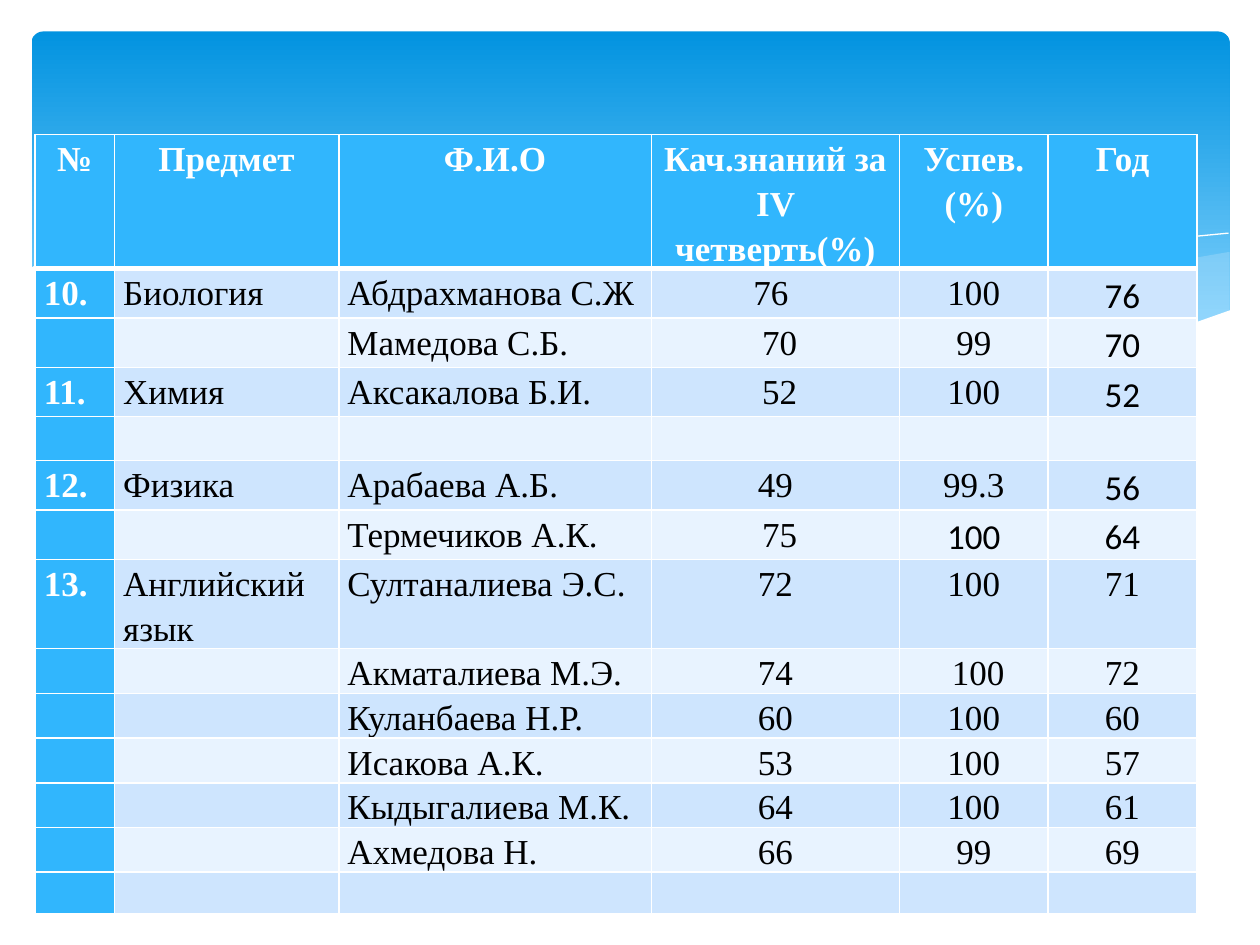
"""Build a slide with a table of school results over a blue wave banner."""
from lxml import etree
from pptx import Presentation
from pptx.dml.color import RGBColor
from pptx.enum import shapes, text
from pptx.oxml import ns
from pptx.util import Pt

WHITE = RGBColor(0xFF, 0xFF, 0xFF)
BLACK = RGBColor(0, 0, 0)
BANNER_TOP = RGBColor(0x02, 0x93, 0xE0)
BANNER_BOTTOM = RGBColor(0x83, 0xD3, 0xFE)
WAVE = RGBColor(0xC6, 0xE7, 0xFC)
ACCENT = RGBColor(0x31, 0xB6, 0xFD)
BANDS = (RGBColor(0xE8, 0xF3, 0xFF), RGBColor(0xCE, 0xE5, 0xFE))

HEADER = ("№", "Предмет", "Ф.И.О", "Кач.знаний за IV четверть(%)", "Успев. (%)", "Год")
RESULTS = [
    ("10.", "Биология", "Абдрахманова С.Ж", "76 ", "100", "76"),
    ("", "", "Мамедова С.Б.", " 70", "99", "70"),
    ("11.", "Химия", "Аксакалова Б.И.", " 52", "100", "52"),
    ("", "", "", "", "", ""),
    ("12.", "Физика", "Арабаева А.Б.", "49", "99.3", "56"),
    ("", "", "Термечиков А.К.", " 75", "100", "64"),
    ("13.", "Английский язык", "Султаналиева Э.С.", "72", "100", "71"),
    ("", "", "Акматалиева М.Э.", "74", " 100", "72"),
    ("", "", "Куланбаева Н.Р.", "60", "100", "60"),
    ("", "", "Исакова А.К.", "53", "100", "57"),
    ("", "", "Кыдыгалиева М.К.", "64", "100", "61"),
    ("", "", "Ахмедова Н.", "66", "99", "69"),
    ("", "", "", "", "", ""),
]
CALIBRI_CELLS = {(1, 5), (2, 5), (3, 5), (5, 5), (6, 4), (6, 5)}
COLUMN_WIDTHS = (45.4, 128.2, 178.6, 141.8, 85, 85)
ROW_HEIGHTS = (76, 28.2, 28.2, 28.2, 25.2, 28.2, 28.2, 51) + (25.5,) * 5 + (24,)

RIGHT_WAVE = [
    (702, 144), (673.2, 149), (619.9, 160.6), (560.9, 174.2), (508.3, 185),
    (475.9, 190.8), (507.6, 195.1), (545, 198.7), (578.2, 200.2), (614.9, 198.7),
    (645.8, 194.4), (673.2, 188.6), (702.7, 177.8), (702.7, 144),
]
LEFT_WAVE = [
    (643, 196.6), (581, 187.2), (508.3, 172.8), (452.9, 159.8), (399.6, 147.6),
    (352.1, 139.7), (302.4, 134.6), (259.9, 133.2), (205.9, 137.5), (260.6, 146.2),
    (323.3, 159.8), (381.6, 172.8), (445, 185.8), (500.4, 194.4), (547.9, 199.4),
    (589, 200.2), (617, 199.4),
]
FALLING_LINE = [
    (222.5, 140.4), (247.7, 136.8), (288.7, 134.6), (337.7, 136.1), (383.8, 139.7),
    (437.8, 146.9), (500.4, 157.7), (572.4, 173.5), (653, 195.8),
]
RISING_LINE = [
    (441.4, 185), (500.4, 169.2), (558.7, 155.5), (623.5, 143.3), (665.3, 136.8),
    (702, 133.2),
]
WHITE_WAVE = [
    (703.4, 177.1), (676.8, 186.5), (647.3, 193.7), (612, 198), (582.5, 199.4),
    (535.7, 197.3), (481, 190.8), (416.9, 180), (321.8, 158.4), (262.8, 145.4),
    (210.2, 136.8), (165.6, 133.2), (127.4, 132.5), (85.7, 134.6), (54.7, 140.4),
    (28.8, 147.6), (16.6, 153.4), (16.6, 236.9), (703.4, 236.9),
]
CURVES = [
    (RIGHT_WAVE, WAVE, 29),
    (LEFT_WAVE, WAVE, 40),
    (FALLING_LINE, None, 100),
    (RISING_LINE, None, 100),
    (WHITE_WAVE, WHITE, 100),
]


def add_banner(page):
    banner = page.shapes.add_shape(
        shapes.MSO_SHAPE.ROUNDED_RECTANGLE, Pt(18), Pt(18), Pt(684.7), Pt(194.4))
    banner.adjustments[0] = 0.034
    banner.shadow.inherit = False
    banner.line.fill.background()
    banner.fill.gradient()
    banner.fill.gradient_angle = 270
    stops = banner.fill.gradient_stops
    for stop, position, color in zip(stops, (0, 0.9), (BANNER_TOP, BANNER_BOTTOM)):
        stop.position = position
        stop.color.rgb = color


def add_curve(page, points, color, opacity):
    corners = [(Pt(x), Pt(y)) for x, y in points]
    builder = page.shapes.build_freeform(*corners[0])
    builder.add_line_segments(corners[1:], close=color is not None)
    curve = builder.convert_to_shape()
    curve.shadow.inherit = False
    if color is None:
        curve.fill.background()
        curve.line.color.rgb = WHITE
        curve.line.width = Pt(0)
        return
    curve.line.fill.background()
    curve.fill.solid()
    curve.fill.fore_color.rgb = color
    if opacity < 100:
        tint = curve.fill._xPr.find(".//" + ns.qn("a:srgbClr"))
        etree.SubElement(tint, ns.qn("a:alpha"), val=str(opacity * 1000))


def set_borders(cell, row):
    properties = cell._tc.get_or_add_tcPr()
    widths = {"L": 1, "R": 1, "T": 3 if row == 1 else 1, "B": 3 if row == 0 else 1}
    for side, width in widths.items():
        edge = etree.SubElement(properties, ns.qn("a:ln" + side), w=str(Pt(width)))
        paint = etree.SubElement(edge, ns.qn("a:solidFill"))
        etree.SubElement(paint, ns.qn("a:srgbClr"), val=str(WHITE))


def fill_cell(cell, row, column, words):
    strong = row == 0 or column == 0
    set_borders(cell, row)
    cell.fill.solid()
    cell.fill.fore_color.rgb = ACCENT if strong else BANDS[row % 2]
    cell.margin_left = cell.margin_right = Pt(4.3 if row == 0 else 5)
    cell.margin_top = cell.margin_bottom = Pt(0)
    if not words:
        return
    para = cell.text_frame.paragraphs[0]
    para.text = words
    para.line_spacing = 1.15
    centred = row == 0 or column >= 3
    para.alignment = text.PP_ALIGN.CENTER if centred else text.PP_ALIGN.LEFT
    font = para.runs[0].font
    font.name = "Calibri" if (row, column) in CALIBRI_CELLS else "Times New Roman"
    font.size = Pt(20)
    font.bold = strong
    font.color.rgb = WHITE if strong else BLACK


def add_results(page):
    rows = [HEADER] + RESULTS
    frame = page.shapes.add_table(
        len(rows), len(HEADER), Pt(20), Pt(77), Pt(sum(COLUMN_WIDTHS)), Pt(sum(ROW_HEIGHTS)))
    table = frame.table
    table.first_col = True
    for column, width in zip(table.columns, COLUMN_WIDTHS):
        column.width = Pt(width)
    for row, height in zip(table.rows, ROW_HEIGHTS):
        row.height = Pt(height)
    for row, values in enumerate(rows):
        for column, words in enumerate(values):
            fill_cell(table.cell(row, column), row, column, words)


def main():
    deck = Presentation()
    deck.slide_width, deck.slide_height = Pt(720), Pt(540)
    page = deck.slides.add_slide(deck.slide_layouts[6])
    add_banner(page)
    for points, color, opacity in CURVES:
        add_curve(page, points, color, opacity)
    add_results(page)
    deck.save("out.pptx")


if __name__ == "__main__":
    main()
